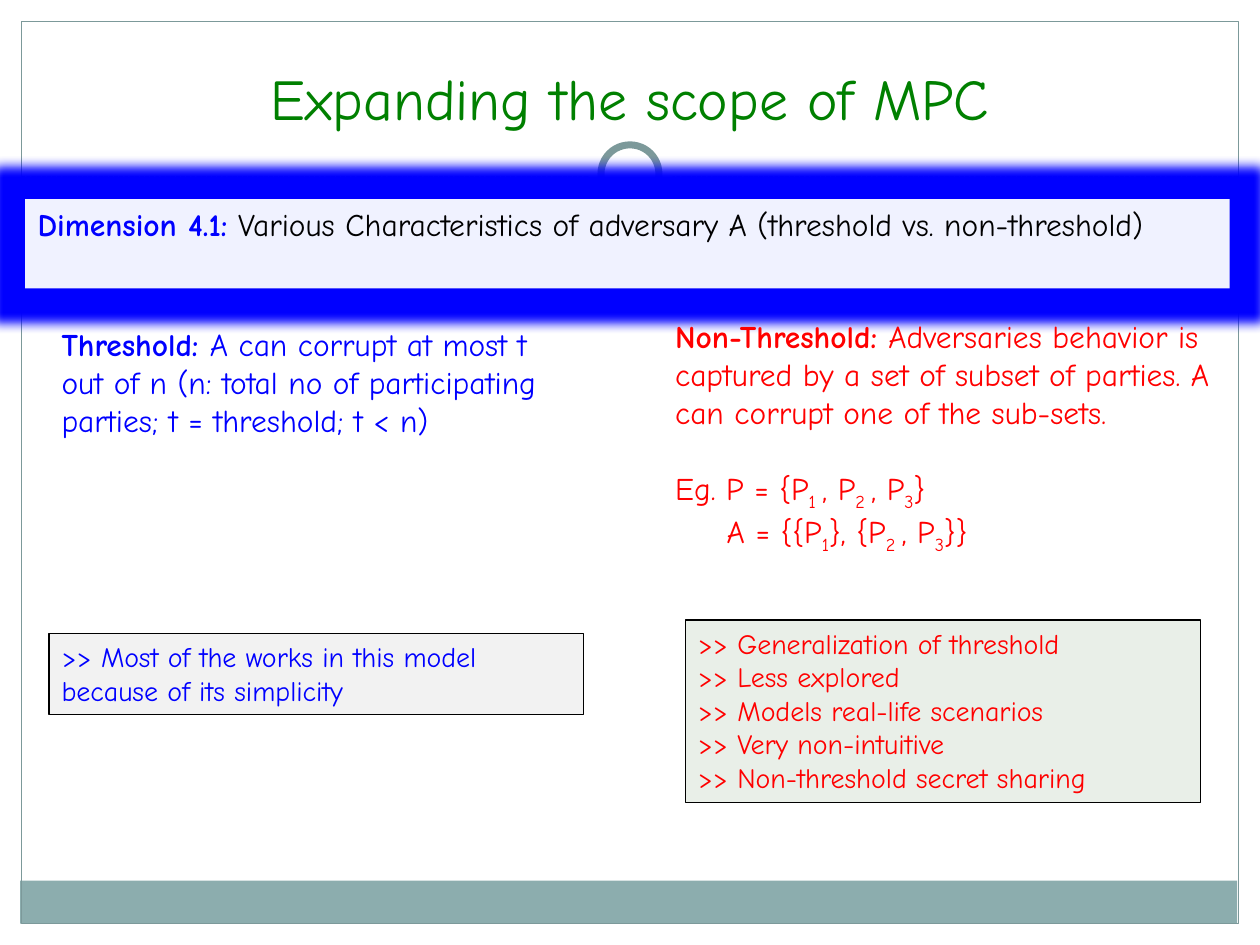
from lxml.etree import SubElement
from pptx import Presentation
from pptx.dml.color import RGBColor
from pptx.enum.dml import MSO_LINE
from pptx.enum.shapes import MSO_CONNECTOR, MSO_SHAPE
from pptx.enum.text import MSO_ANCHOR, PP_ALIGN
from pptx.oxml.ns import qn
from pptx.util import Inches, Pt

WHITE = RGBColor(0xFF, 0xFF, 0xFF)
BLACK = RGBColor(0, 0, 0)
BLUE = RGBColor(0, 0, 0xFF)
RED = RGBColor(0xFF, 0, 0)
GREEN = RGBColor(0, 0x80, 0)
TEAL = RGBColor(0x7C, 0x99, 0x9A)
BAND = RGBColor(0x8C, 0xAD, 0xAE)
PALE = RGBColor(0xF0, 0xF2, 0xFF)
GRAY = RGBColor(0xF2, 0xF2, 0xF2)
SAGE = RGBColor(0xE9, 0xEF, 0xE8)
FONT = "Comic Neue"


def draw(kind, box, fill=None, line=None, width=0.75):
    shape = slide.shapes.add_shape(kind, *map(Inches, box))
    shape.shadow.inherit = False
    if fill is None:
        shape.fill.background()
    else:
        shape.fill.solid()
        shape.fill.fore_color.rgb = fill
    if line is None:
        shape.line.fill.background()
    else:
        shape.line.color.rgb = line
        shape.line.width = Pt(width)
    return shape


def write(shape, paras, size=18, color=BLACK, align=PP_ALIGN.LEFT, anchor=MSO_ANCHOR.TOP):
    """Fill shape with paragraphs, each a list of (text, style); style is "bold", "sub" or a colour."""
    frame = shape.text_frame
    frame.word_wrap = True
    frame.vertical_anchor = anchor
    for i, runs in enumerate(paras):
        para = frame.paragraphs[0] if i == 0 else frame.add_paragraph()
        para.alignment = align
        for text, style in runs:
            run = para.add_run()
            run.text = text
            font = run.font
            font.name, font.size = FONT, Pt(size)
            font.bold = style == "bold"
            font.color.rgb = style if isinstance(style, RGBColor) else color
            if style == "sub":
                font._element.set("baseline", "-25000")


deck = Presentation()
deck.slide_width, deck.slide_height = Inches(10), Inches(7.5)
slide = deck.slides.add_slide(deck.slide_layouts[5])

# Frame, footer band and divider with its ring
draw(MSO_SHAPE.RECTANGLE, (0.16, 6.99, 9.66, 0.34), BAND)
draw(MSO_SHAPE.RECTANGLE, (0.17, 0.17, 9.66, 7.16), line=TEAL)
rule = slide.shapes.add_connector(
    MSO_CONNECTOR.STRAIGHT, Inches(0.17), Inches(1.4), Inches(9.83), Inches(1.4))
rule.line.color.rgb = TEAL
rule.line.width = Pt(0.75)
rule.line.dash_style = MSO_LINE.SQUARE_DOT
SubElement(rule._element.spPr, qn("a:effectLst"))
draw(MSO_SHAPE.OVAL, (4.67, 1.05, 0.67, 0.67), WHITE)
draw(MSO_SHAPE.OVAL, (4.77, 1.15, 0.46, 0.46), WHITE, TEAL, 4)

title = slide.shapes.title
title.left, title.top, title.width, title.height = map(Inches, (0.69, 0.18, 8.62, 0.92))
write(title, [[("Expanding the scope of MPC", "")]], size=33, color=GREEN,
      align=PP_ALIGN.CENTER, anchor=MSO_ANCHOR.BOTTOM)

# Banner with a blue glow
banner = draw(MSO_SHAPE.RECTANGLE, (0.2, 1.58, 9.56, 0.71), PALE)
effects = banner._element.spPr.find(qn("a:effectLst"))
glow = SubElement(effects, qn("a:glow"), rad=str(Inches(0.18)))
SubElement(glow, qn("a:srgbClr"), val=str(BLUE))
write(banner, [[
    ("Dimension 4.1:", "bold"),
    (" Various Characteristics of adversary A (threshold vs. non-threshold)", BLACK),
]], color=BLUE)

# The two models
left = slide.shapes.add_textbox(*map(Inches, (0.39, 2.53, 4.24, 1.31)))
write(left, [[
    ("Threshold: ", "bold"),
    ("A can corrupt at most t out of n (n: total no of participating parties; "
     "t = threshold; t < n)", ""),
]], color=BLUE)

right = slide.shapes.add_textbox(*map(Inches, (5.26, 2.47, 4.5, 2.22)))
write(right, [
    [("Non-Threshold: ", "bold"),
     ("Adversaries behavior is captured by a set of subset of parties. "
      "A can corrupt one of the sub-sets.", "")],
    [("Eg. P = {P", ""), ("1 ", "sub"), (", P", ""), ("2 ", "sub"),
     (", P", ""), ("3", "sub"), ("}", "")],
    [("A = {{P", ""), ("1", "sub"), ("}, {P", ""), ("2 ", "sub"),
     (", P", ""), ("3", "sub"), ("}}", "")],
], color=RED)
parties, sets = right.text_frame.paragraphs[1:]
parties.space_before = Pt(21.7)
sets._p.get_or_add_pPr().set("marL", str(Inches(0.41)))

# Remarks on each model
remarks = [
    ((0.39, 5.03, 4.24, 0.64), GRAY, BLUE,
     ["Most of the works in this model because of its simplicity"]),
    ((5.44, 4.92, 4.09, 1.45), SAGE, RED,
     ["Generalization of threshold", "Less explored", "Models real-life scenarios",
      "Very non-intuitive", "Non-threshold secret sharing"]),
]
for box, fill, color, lines in remarks:
    note = draw(MSO_SHAPE.RECTANGLE, box, fill, BLACK)
    write(note, [[(f">> {line}", "")] for line in lines], size=16, color=color)

deck.save("out.pptx")
